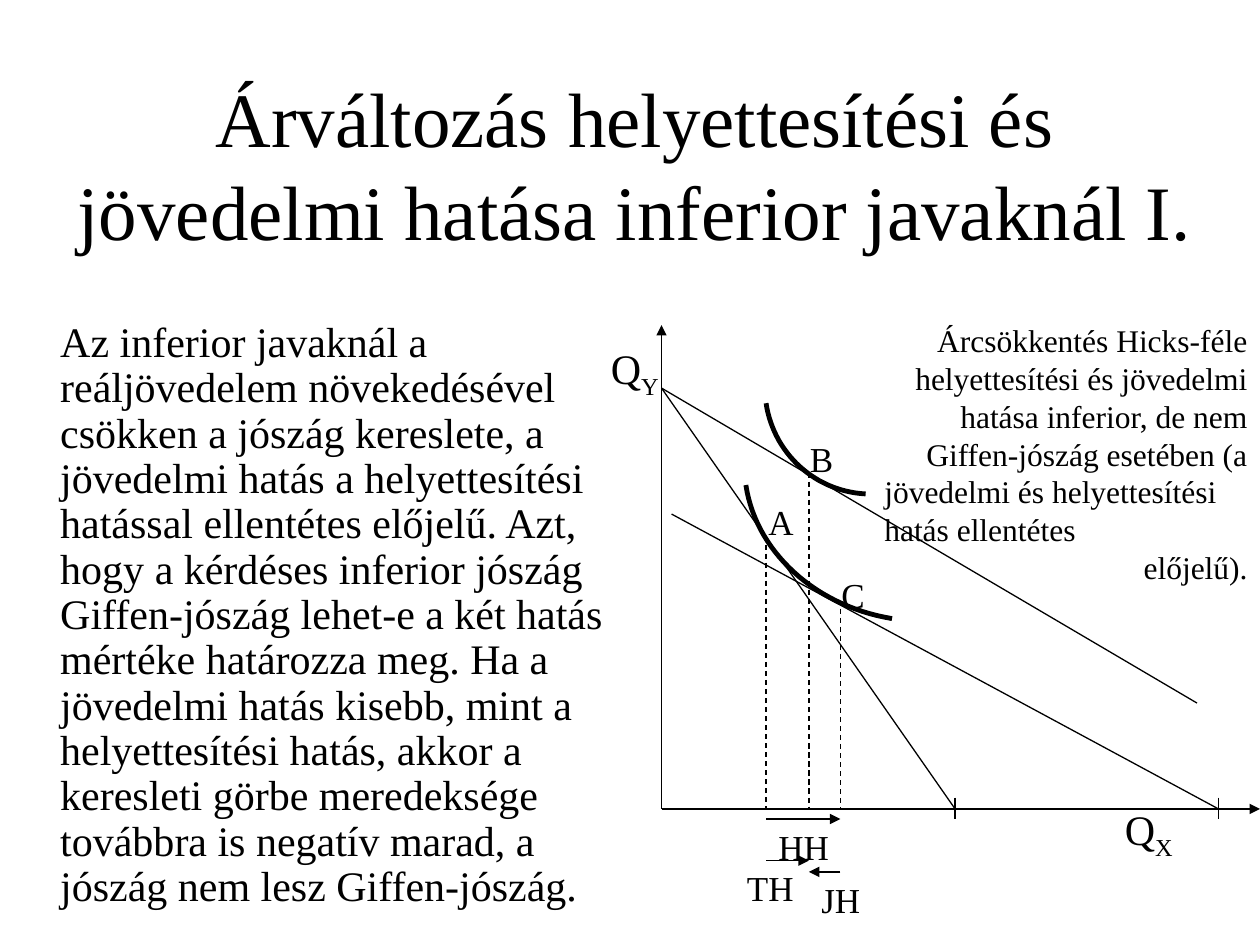
from pptx import Presentation
from pptx.dml.color import RGBColor
from pptx.enum.dml import MSO_LINE
from pptx.enum.shapes import MSO_CONNECTOR
from pptx.enum.text import MSO_ANCHOR as Anchor, PP_ALIGN as Align
from pptx.oxml.ns import qn
from pptx.util import Inches, Pt
from lxml.etree import SubElement

COLORS = {"ink": "000000"}
FONT = "Times New Roman"
INK = RGBColor.from_string(COLORS["ink"])
TITLE = "Árváltozás helyettesítési és jövedelmi hatása inferior javaknál I."
BODY = (
    "Az inferior javaknál a reáljövedelem növekedésével csökken a jószág "
    "kereslete, a jövedelmi hatás a helyettesítési hatással ellentétes előjelű. "
    "Azt, hogy a kérdéses inferior jószág Giffen-jószág lehet-e a két hatás "
    "mértéke határozza meg. Ha a jövedelmi hatás kisebb, mint a helyettesítési "
    "hatás, akkor a keresleti görbe meredeksége továbbra is negatív marad, "
    "a jószág nem lesz Giffen-jószág."
)
NOTE = [
    ("Árcsökkentés Hicks-féle helyettesítési és jövedelmi hatása inferior, "
     "de nem Giffen-jószág esetében (a", Align.RIGHT),
    ("jövedelmi és helyettesítési hatás ellentétes", Align.LEFT),
    ("előjelű).", Align.RIGHT),
]
BASE = 6.42
AXIS = 5.25


def add_run(par, text, size, sub=False):
    """Append a run in the slide font, lowered if sub is set."""
    run = par.add_run()
    run.text = text
    run.font.size = Pt(size)
    run.font.name = FONT
    run.font.color.rgb = INK
    if sub:
        run.font._element.set("baseline", "-25000")


def add_text(slide, text, box, size=20, align=Align.LEFT, anchor=Anchor.TOP,
             gap=None, sub=""):
    """Add a text box; text is a string or a list of (string, align) pairs."""
    frame = slide.shapes.add_textbox(*map(Inches, box)).text_frame
    frame.word_wrap = True
    frame.vertical_anchor = anchor
    pairs = [(text, align)] if isinstance(text, str) else text
    for i, (words, side) in enumerate(pairs):
        par = frame.add_paragraph() if i else frame.paragraphs[0]
        par.alignment = side
        if gap:
            par.line_spacing = gap
        add_run(par, words, size)
        if sub:
            add_run(par, sub, size, sub=True)


def add_line(slide, start, end, dash=False, arrow=False):
    """Draw a thin straight line, dashed or with an arrowhead at its end."""
    line = slide.shapes.add_connector(
        MSO_CONNECTOR.STRAIGHT, *map(Inches, (*start, *end)))
    line.line.color.rgb = INK
    line.line.width = Pt(0.75)
    if dash:
        line.line.dash_style = MSO_LINE.DASH
    if arrow:
        SubElement(line.line._get_or_add_ln(), qn("a:tailEnd"), type="triangle")
    SubElement(line._element.spPr, qn("a:effectLst"))


def add_curve(slide, knots, steps=30):
    """Draw a thick cubic curve through sampled points."""
    def point(t):
        """Return the curve point at t."""
        u = 1 - t
        parts = (u ** 3, 3 * u * u * t, 3 * u * t * t, t ** 3)
        return tuple(Inches(sum(w * k[i] for w, k in zip(parts, knots)))
                     for i in (0, 1))

    dots = [point(i / steps) for i in range(steps + 1)]
    form = slide.shapes.build_freeform(*dots[0])
    form.add_line_segments(dots[1:], close=False)
    curve = form.convert_to_shape()
    curve.shadow.inherit = False
    curve.fill.background()
    curve.line.color.rgb = INK
    curve.line.width = Pt(2.75)


def add_graph(slide):
    """Draw the axes, budget lines, indifference curves and effects."""
    for end in ((AXIS, 2.58), (10, BASE)):
        add_line(slide, (AXIS, BASE), end, arrow=True)
    for x in (7.58, 9.67):
        add_line(slide, (x, 6.33), (x, 6.5))
    for start, end in (((AXIS, 3.08), (7.58, BASE)),
                       ((5.33, 4.08), (9.67, BASE)),
                       ((AXIS, 3.08), (9.5, 5.58))):
        add_line(slide, start, end)
    add_curve(slide, ((7.08, 4.91), (6.47, 4.81), (6, 4.38), (5.92, 3.85)))
    add_curve(slide, ((6.87, 3.92), (6.47, 3.9), (6.14, 3.6), (6.08, 3.2)))
    for x, top in ((6.08, 4.25), (6.42, 3.75), (6.67, 4.83)):
        add_line(slide, (x, top), (x, BASE), dash=True)
    for x, end, y in ((6.08, 6.67, 6.5), (6.08, 6.42, 6.83), (6.67, 6.42, 6.92)):
        add_line(slide, (x, y), (end, y), arrow=True)


def add_labels(slide):
    """Name the axes, the points and the effects."""
    add_text(slide, "Q", (8.83, 6.33, 1.17, 0.5), size=24, sub="X")
    add_text(slide, "Q", (4.75, 2.67, 0.75, 0.5), size=24, sub="Y")
    for name, x, y in (("A", 6, 3.92), ("B", 6.33, 3.42), ("C", 6.58, 4.5)):
        add_text(slide, name, (x, y, 0.58, 0.44))
    for name, x, y in (("HH", 6.08, 6.5), ("TH", 5.83, 6.83), ("JH", 6.42, 6.92)):
        add_text(slide, name, (x, y, 1.83, 0.44))


def main():
    """Build the slide and save it."""
    deck = Presentation()
    deck.slide_width, deck.slide_height = Inches(10), Inches(7.5)
    slide = deck.slides.add_slide(deck.slide_layouts[6])
    add_text(slide, TITLE, (0.5, 0.67, 9.08, 1.25), size=44,
             align=Align.CENTER, anchor=Anchor.MIDDLE)
    add_graph(slide)
    add_text(slide, BODY, (0.38, 2.5, 4.87, 4.5), size=24, gap=0.9)
    add_text(slide, NOTE, (6.92, 2.5, 3.08, 2.22), size=18)
    add_labels(slide)
    deck.save("out.pptx")


if __name__ == "__main__":
    main()
